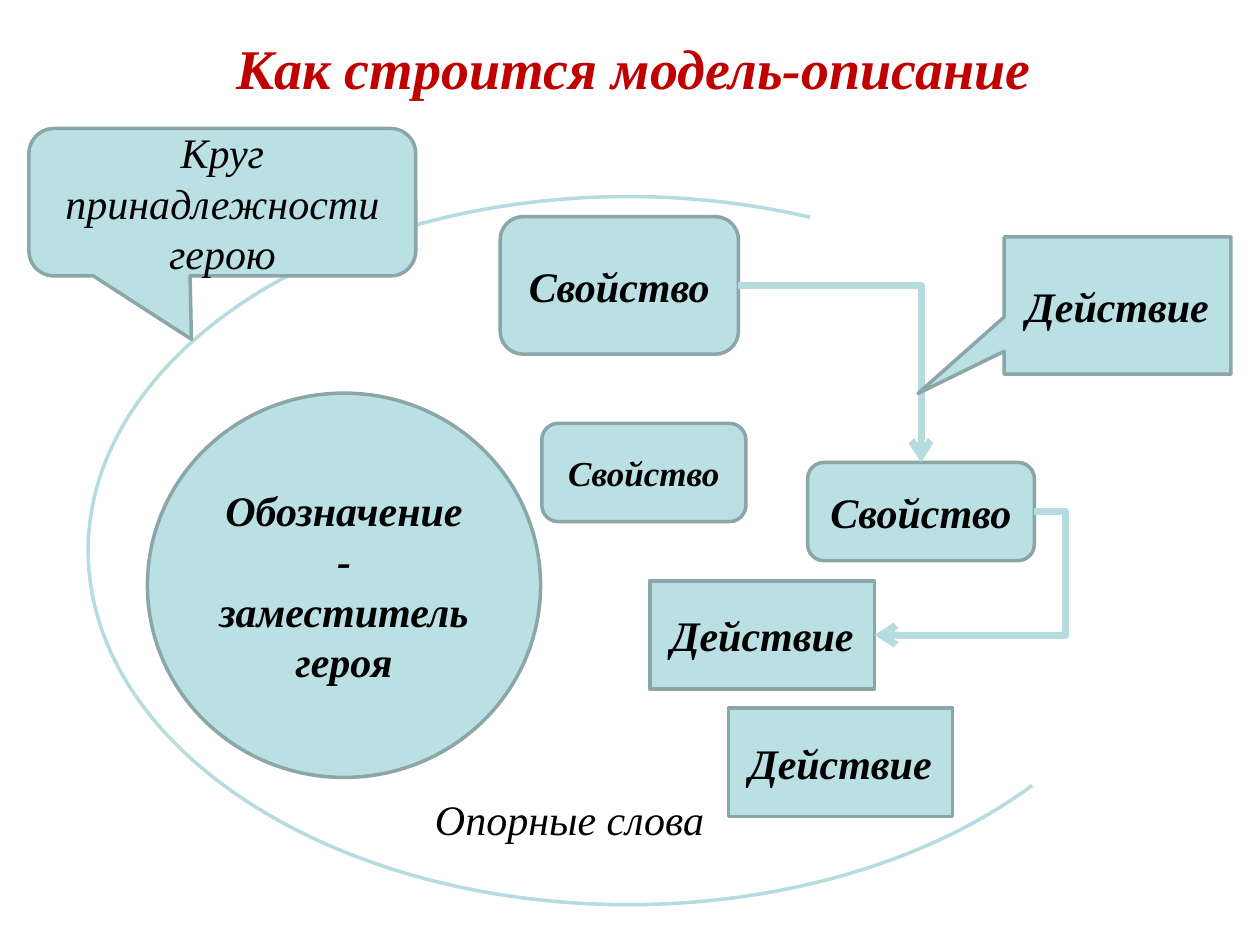
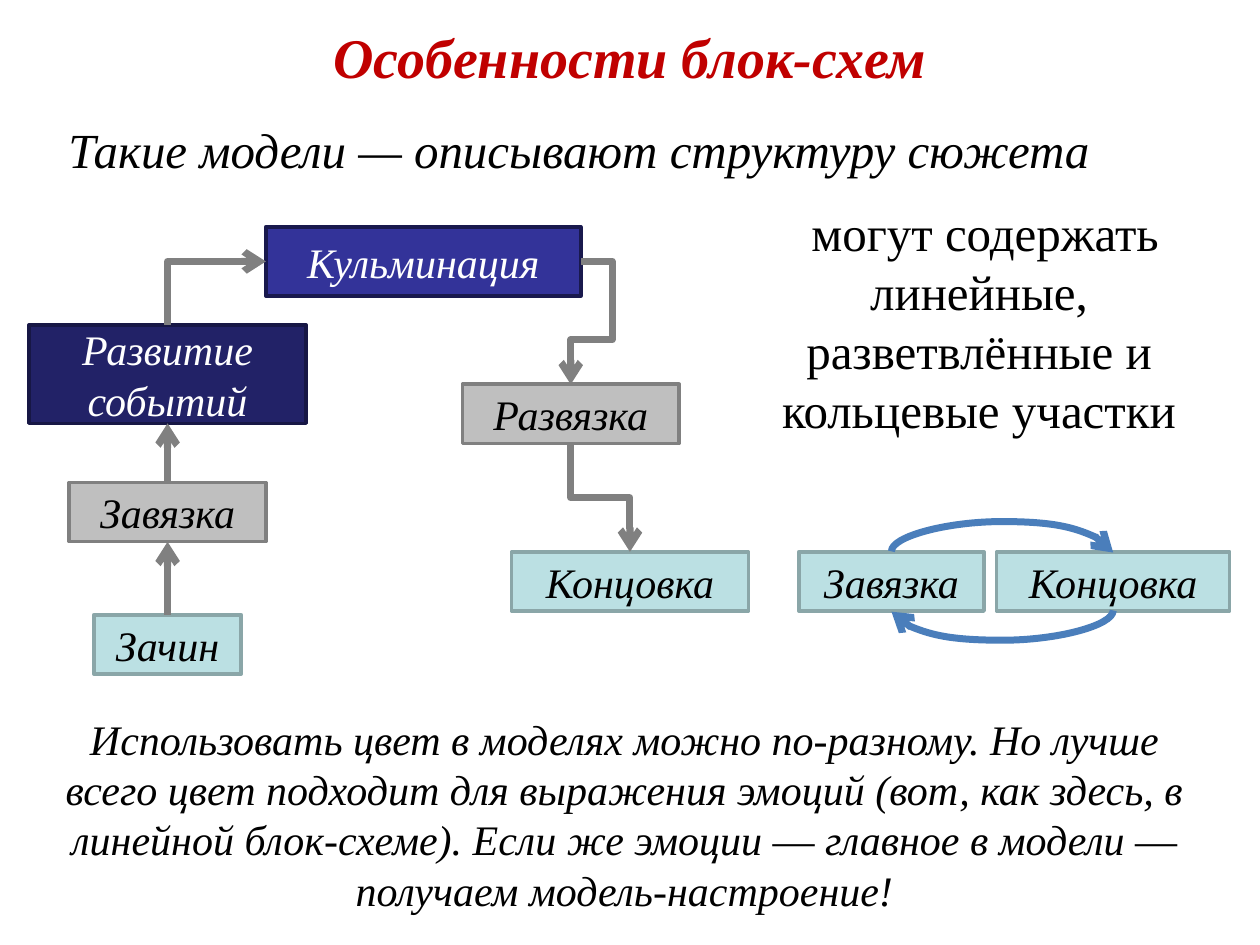
from dataclasses import dataclass

from lxml.etree import SubElement
from pptx import Presentation
from pptx.dml.color import RGBColor
from pptx.enum.shapes import MSO_CONNECTOR, MSO_SHAPE
from pptx.enum.text import MSO_ANCHOR, PP_ALIGN
from pptx.oxml.ns import qn
from pptx.util import Inches, Pt

COLUMNS, ROWS = 100, 75
CELL = Inches(0.1)
TITLE_ONLY = 5
TOP, LEFT, BOTTOM, RIGHT = range(4)


@dataclass(frozen=True)
class Shade:
    fill: str
    line: str
    ink: str = "000000"


@dataclass(frozen=True)
class Theme:
    font: str = "Times New Roman"
    title_color: str = "C00000"
    ink: str = "000000"
    title_size: int = 32
    lead_size: int = 28
    text_size: int = 24
    small_size: int = 20
    border: int = 2
    arrow: int = 4
    pale_link: str = "B6DCDF"
    gray_link: str = "808080"
    ring_link: str = "4A7EBB"
    pale: Shade = Shade("BBE0E3", "8AA6A8")
    gray: Shade = Shade("BFBFBF", "808080")
    navy: Shade = Shade("222267", "171745", "FFFFFF")
    blue: Shade = Shade("333399", "19194D", "FFFFFF")


THEME = Theme()


@dataclass(frozen=True)
class Box:
    """A rectangle in grid cells."""
    left: float
    top: float
    width: float
    height: float

    def inner(self, left, top, width, height):
        """Return a box given relative to this one."""
        return Box(self.left + left, self.top + top, width, height)

    def lengths(self):
        return [round(cells * CELL) for cells in
                (self.left, self.top, self.width, self.height)]


def write(shape, text, size, color=THEME.ink, bold=False, italic=True):
    frame = shape.text_frame
    frame.word_wrap = True
    frame.text = text
    para = frame.paragraphs[0]
    para.alignment = PP_ALIGN.CENTER
    font = para.runs[0].font
    font.name, font.size = THEME.font, Pt(size)
    font.bold, font.italic = bold, italic
    font.color.rgb = RGBColor.from_string(color)


def set_line(shape, color, width):
    shape.line.color.rgb = RGBColor.from_string(color)
    shape.line.width = Pt(width)


def add_page(deck, title, box):
    page = deck.slides.add_slide(deck.slide_layouts[TITLE_ONLY])
    heading = page.shapes.title
    heading.left, heading.top, heading.width, heading.height = box.lengths()
    write(heading, title, THEME.title_size, THEME.title_color, bold=True)
    heading.text_frame.vertical_anchor = MSO_ANCHOR.MIDDLE
    return page


def add_label(page, box, text, size=THEME.text_size, italic=True):
    write(page.shapes.add_textbox(*box.lengths()), text, size, italic=italic)


def add_node(page, box, text, shade=THEME.pale, kind=MSO_SHAPE.RECTANGLE,
             size=THEME.text_size, bold=False, adjustments=()):
    node = page.shapes.add_shape(kind, *box.lengths())
    node.shadow.inherit = False
    node.fill.solid()
    node.fill.fore_color.rgb = RGBColor.from_string(shade.fill)
    set_line(node, shade.line, THEME.border)
    for index, value in enumerate(adjustments):
        node.adjustments[index] = value
    write(node, text, size, shade.ink, bold)
    node.text_frame.vertical_anchor = MSO_ANCHOR.MIDDLE
    return node


def add_arrow(page, start, start_side, end, end_side, color):
    """Join two nodes with a straight arrow."""
    arrow = page.shapes.add_connector(MSO_CONNECTOR.STRAIGHT, 0, 0, 0, 0)
    arrow.begin_connect(start, start_side)
    arrow.end_connect(end, end_side)
    set_line(arrow, color, THEME.arrow)
    properties = arrow._element.spPr
    SubElement(properties.find(qn("a:ln")), qn("a:tailEnd"), type="arrow")
    SubElement(properties, qn("a:effectLst"))
    return arrow


def bend(arrow, preset, upright=False, turns=()):
    """Give an arrow a bent or curved preset.

    An upright arrow leaves its node vertically, so its frame is turned by 90
    degrees. Turns are distances in cells from the start, along the frame's axes.
    """
    run = arrow.end_x - arrow.begin_x
    drop = arrow.end_y - arrow.begin_y
    center_x = (arrow.begin_x + arrow.end_x) / 2
    center_y = (arrow.begin_y + arrow.end_y) / 2
    along, across = (drop, -run) if upright else (run, drop)
    if along == 0:
        along = CELL // 10
    width, height = abs(along), abs(across)
    arrow.left, arrow.top = round(center_x - width / 2), round(center_y - height / 2)
    arrow.width, arrow.height = width, height

    frame = arrow._element.spPr.find(qn("a:xfrm"))
    frame.set("rot", str(90 * 60000 if upright else 0))
    frame.set("flipH", str(int(along < 0)))
    frame.set("flipV", str(int(across < 0)))
    geometry = arrow._element.spPr.find(qn("a:prstGeom"))
    geometry.set("prst", preset)
    guides = geometry.find(qn("a:avLst"))
    for number, (turn, extent) in enumerate(zip(turns, (along, across)), 1):
        share = round(turn * CELL / extent * 100000)
        SubElement(guides, qn("a:gd"), name=f"adj{number}", fmla=f"val {share}")


def draw_hero(page, box):
    """Draw the hero's circle, the arc around it and the callout to the arc."""
    add_node(page, box.inner(9.4, 21, 31.2, 30.5), "Обозначение - заместитель героя",
             kind=MSO_SHAPE.OVAL, bold=True)
    arc = page.shapes.add_shape(MSO_SHAPE.ARC, *box.inner(4.7, 5.4, 85.7, 56.2).lengths())
    arc.shadow.inherit = False
    arc.fill.background()
    set_line(arc, THEME.pale_link, THEME.border)
    for index, degrees in enumerate((30.16, 298.61)):
        arc.adjustments[index] = degrees * 0.6
    add_node(page, box.inner(0, 0, 30.7, 11.7), "Круг принадлежности герою",
             kind=MSO_SHAPE.ROUNDED_RECTANGULAR_CALLOUT,
             adjustments=(-0.08, 0.93, 0.17))
    add_label(page, box.inner(30.5, 52.3, 24.8, 5), "Опорные слова")


def draw_traits(page, box):
    """Draw the properties and actions and the arrows between them."""
    def add_property(*place, size=THEME.text_size):
        return add_node(page, box.inner(*place), "Свойство", size=size, bold=True,
                        kind=MSO_SHAPE.ROUNDED_RECTANGLE)

    def add_action(*place, **style):
        return add_node(page, box.inner(*place), "Действие", bold=True, **style)

    main_property = add_property(0, 0, 18.9, 10.9)
    add_property(3.3, 16.4, 16.2, 7.8, size=THEME.small_size)
    side_property = add_property(24.4, 19.5, 18, 7.8)
    action = add_action(11.9, 28.9, 17.8, 8.6)
    add_action(18.1, 39, 17.8, 8.6)
    bend(add_arrow(page, main_property, RIGHT, side_property, TOP, THEME.pale_link),
         "bentConnector2")
    bend(add_arrow(page, side_property, RIGHT, action, RIGHT, THEME.pale_link),
         "bentConnector3", turns=(2.5,))
    add_action(40, 1.6, 18, 10.9, kind=MSO_SHAPE.RECTANGULAR_CALLOUT,
               adjustments=(-0.88, 0.64))


def draw_plot(page, box):
    """Draw the chain of plot stages from the opening to the ending."""
    stages = {
        "Зачин": ((5.15, 30.8, 11.7, 4.7), THEME.pale),
        "Завязка": ((3.2, 20.3, 15.6, 4.7), THEME.gray),
        "Развитие событий": ((0, 7.8, 22, 7.8), THEME.navy),
        "Кульминация": ((18.8, 0, 25, 5.5), THEME.blue),
        "Развязка": ((34.4, 12.5, 17.2, 4.7), THEME.gray),
        "Концовка": ((38.3, 25.8, 18.8, 4.7), THEME.pale),
    }
    opening, setup, rising, climax, resolution, ending = [
        add_node(page, box.inner(*place), name, shade)
        for name, (place, shade) in stages.items()]
    color = THEME.gray_link
    add_arrow(page, opening, TOP, setup, BOTTOM, color)
    add_arrow(page, setup, TOP, rising, BOTTOM, color)
    bend(add_arrow(page, rising, TOP, climax, LEFT, color),
         "bentConnector2", upright=True)
    bend(add_arrow(page, climax, RIGHT, resolution, TOP, color),
         "bentConnector4", turns=(2.5, 6.2))
    bend(add_arrow(page, resolution, BOTTOM, ending, TOP, color),
         "bentConnector3", upright=True)


def draw_ring(page, box):
    """Draw two stages that lead to each other."""
    setup = add_node(page, box.inner(0, 0, 14.7, box.height), "Завязка")
    ending = add_node(page, box.inner(15.7, 0, 18.5, box.height), "Концовка")
    for start, end, side, bulge in ((setup, ending, TOP, -2.4),
                                    (ending, setup, BOTTOM, 2.4)):
        bend(add_arrow(page, start, side, end, side, THEME.ring_link),
             "curvedConnector3", upright=True, turns=(bulge,))


def add_description_page(deck):
    page = add_page(deck, "Как строится модель-описание", Box(5.3, 0.9, 90, 8.8))
    draw_hero(page, Box(2.3, 10.2, 90.4, 61.6))
    draw_traits(page, Box(39.7, 17.2, 58, 47.6))


def add_flowchart_page(deck):
    page = add_page(deck, "Особенности блок-схем", Box(5, 1.1, 90, 6.7))
    add_label(page, Box(3.6, 9, 84.7, 5.7), "Такие модели — описывают структуру сюжета",
              THEME.lead_size)
    add_label(page, Box(58.5, 15.6, 38.4, 19.9),
              " могут содержать линейные, разветвлённые и кольцевые участки",
              THEME.lead_size, italic=False)
    draw_plot(page, Box(2.3, 18, 57.1, 35.5))
    draw_ring(page, Box(63.4, 43.8, 34.2, 4.7))
    add_label(page, Box(2.3, 56.1, 94.5, 17.2),
              "Использовать цвет в моделях можно по-разному. Но лучше всего цвет "
              "подходит для выражения эмоций (вот, как здесь, в линейной блок-схеме). "
              "Если же эмоции ― главное в модели ― получаем модель-настроение!")


def main():
    deck = Presentation()
    deck.slide_width, deck.slide_height = COLUMNS * CELL, ROWS * CELL
    add_description_page(deck)
    add_flowchart_page(deck)
    deck.save("out.pptx")


if __name__ == "__main__":
    main()
